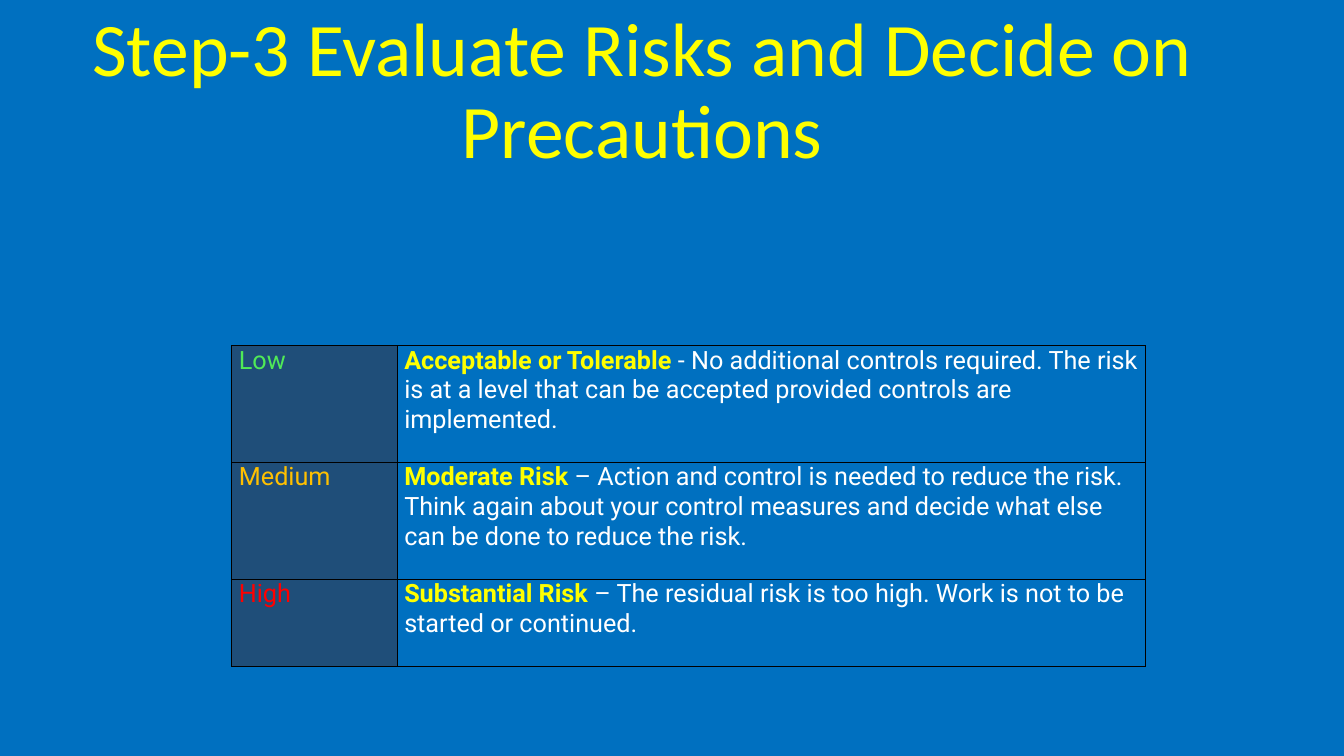
import pptx
import pptx.dml.color
import pptx.enum.text
import pptx.oxml
import pptx.oxml.ns
import pptx.util

Inches = pptx.util.Inches
Pt = pptx.util.Pt
RGBColor = pptx.dml.color.RGBColor

BLUE = RGBColor(0x00, 0x70, 0xC0)
NAVY = RGBColor(0x1F, 0x4E, 0x79)
YELLOW = RGBColor(0xFF, 0xFF, 0x00)
WHITE = RGBColor(0xFF, 0xFF, 0xFF)
BLACK = RGBColor(0x00, 0x00, 0x00)
GREEN = RGBColor(0x50, 0xEA, 0x57)
AMBER = RGBColor(0xFF, 0xC0, 0x00)
RED = RGBColor(0xFF, 0x00, 0x00)

# Level, level colour, rating, action, row height in inches
RISKS = [
    ("Low", GREEN, "Acceptable or Tolerable ",
     "- No additional controls required. The risk is at a level that can be "
     "accepted provided controls are implemented.", 1.16),
    ("Medium", AMBER, "Moderate Risk ",
     "– Action and control is needed to reduce the risk. Think again about your "
     "control measures and decide what else can be done to reduce the risk.", 1.16),
    ("High", RED, "Substantial Risk ",
     "– The residual risk is too high. Work is not to be started or continued.", 0.86),
]


class RiskPage:
    title_font = "Calibri"
    table_font = "Roboto"

    def __init__(self, deck):
        self.page = deck.slides.add_slide(deck.slide_layouts[6])
        fill = self.page.background.fill
        fill.solid()
        fill.fore_color.rgb = BLUE

    def title(self, text, left, top, width, height):
        box = self.page.shapes.add_textbox(
            Inches(left), Inches(top), Inches(width), Inches(height))
        frame = box.text_frame
        frame.word_wrap = True
        frame.vertical_anchor = pptx.enum.text.MSO_ANCHOR.BOTTOM
        para = frame.paragraphs[0]
        para.text = text
        para.alignment = pptx.enum.text.PP_ALIGN.CENTER
        para.line_spacing = 0.9
        para.font.name = self.title_font
        para.font.size = Pt(54)
        para.font.color.rgb = YELLOW

    def table(self, risks, left, top, widths):
        heights = [risk[-1] for risk in risks]
        table = self.page.shapes.add_table(
            len(risks), len(widths), Inches(left), Inches(top),
            Inches(sum(widths)), Inches(sum(heights))).table
        table.first_row = False
        table.horz_banding = False
        for column, width in zip(table.columns, widths):
            column.width = Inches(width)
        for row, (level, color, rating, action, height) in zip(table.rows, risks):
            row.height = Inches(height)
            level_cell, action_cell = row.cells
            self.cell(level_cell, [(level, color, False)], NAVY)
            self.cell(action_cell, [(rating, YELLOW, True), (action, WHITE, False)])

    def cell(self, cell, spans, fill=None):
        cell.margin_left = cell.margin_right = Inches(0.07)
        cell.margin_top = cell.margin_bottom = 0
        para = cell.text_frame.paragraphs[0]
        para.font.name = self.table_font
        para.font.size = Pt(18)
        for text, color, bold in spans:
            span = para.add_run()
            span.text = text
            span.font.name = self.table_font
            span.font.size = Pt(18)
            span.font.bold = bold
            span.font.color.rgb = color
        self.borders(cell)
        if fill is None:
            cell.fill.background()
        else:
            cell.fill.solid()
            cell.fill.fore_color.rgb = fill

    def borders(self, cell):
        properties = cell._tc.get_or_add_tcPr()
        for side in ("lnL", "lnR", "lnT", "lnB"):
            properties.append(pptx.oxml.parse_xml(
                f'<a:{side} {pptx.oxml.ns.nsdecls("a")} w="{Pt(1)}">'
                f'<a:solidFill><a:srgbClr val="{BLACK}"/></a:solidFill></a:{side}>'))


def main():
    deck = pptx.Presentation()
    deck.slide_width = Inches(13.33)
    deck.slide_height = Inches(7.5)

    risk_page = RiskPage(deck)
    # Heading
    risk_page.title("Step-3 Evaluate Risks and Decide on Precautions",
                    0.62, 0.54, 11.5, 1.24)
    # Risk levels and the action each one calls for
    risk_page.table(RISKS, 2.3, 3.43, [1.64, 7.42])

    deck.save("out.pptx")


if __name__ == "__main__":
    main()
